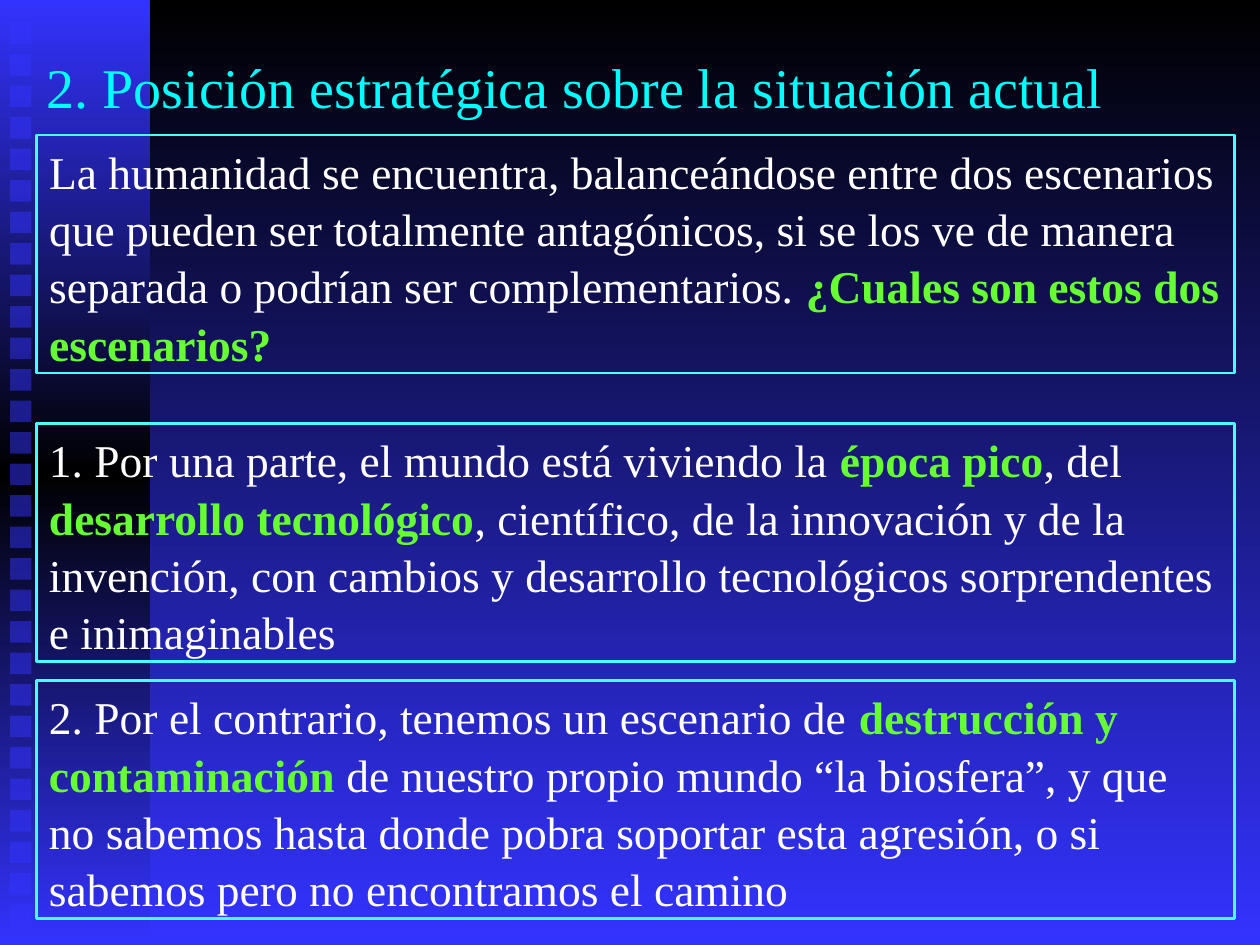
from lxml import etree
from pptx import Presentation, util as u
from pptx.dml.color import RGBColor
from pptx.enum import shapes, text
from pptx.oxml.ns import qn

HUES = {"blue": "3333FF", "black": "000000", "cyan": "00FFFF",
        "edge": "47FFFF", "white": "FFFFFF", "green": "66FF33"}
FONT = "Times New Roman"
LEFT, WIDE, HIGH = 0.29, 9.51, 1.89


class Deck:
    """Holds the style and the current slide."""

    def __init__(self):
        self.prs = Presentation()
        self.prs.slide_width, self.prs.slide_height = u.Inches(10), u.Inches(7.5)
        self.slide = self.prs.slides.add_slide(self.prs.slide_layouts[1])

    def hue(self, name):
        return RGBColor.from_string(HUES[name])

    def blend(self, fill, root, names):
        fill.gradient()
        fill.gradient_angle = 270
        stops = next(root.iter(qn("a:gsLst")))
        for old in list(stops):
            stops.remove(old)
        for i, name in enumerate(names):
            pos = str(100000 * i // (len(names) - 1))
            stop = etree.SubElement(stops, qn("a:gs"), pos=pos)
            etree.SubElement(stop, qn("a:srgbClr"), val=HUES[name])

    def back(self, names):
        self.blend(self.slide.background.fill, self.slide.element, names)

    def rect(self, *box):
        item = self.slide.shapes.add_shape(
            shapes.MSO_SHAPE.RECTANGLE, *map(u.Inches, box))
        item.shadow.inherit = False
        item.line.fill.background()
        return item

    def band(self, box, names):
        item = self.rect(*box)
        self.blend(item.fill, item.element, names)

    def tile(self, box, name):
        item = self.rect(*box)
        item.fill.solid()
        item.fill.fore_color.rgb = self.hue(name)
        tint = next(item.element.iter(qn("a:srgbClr")))
        etree.SubElement(tint, qn("a:alpha"), val="50000")

    def place(self, item, box):
        item.left, item.top, item.width, item.height = map(u.Inches, box)
        self.slide.shapes.element.append(item.element)

    def label(self, item, runs, size, anchor):
        frame = item.text_frame
        frame.word_wrap = True
        frame.auto_size = text.MSO_AUTO_SIZE.NONE
        frame.vertical_anchor = anchor
        para = frame.paragraphs[0]
        para.alignment = text.PP_ALIGN.LEFT
        for words, name, bold in runs:
            run = para.add_run()
            run.text = words
            font = run.font
            font.name, font.size, font.bold = FONT, u.Pt(size), bold
            font.color.rgb = self.hue(name)
        return para

    def title(self, words, box):
        item = self.slide.shapes.title
        self.place(item, box)
        self.label(item, [(words, "cyan", False)], 32, text.MSO_ANCHOR.MIDDLE)

    def panel(self, top, parts, body=False):
        box = LEFT, top, WIDE, HIGH
        if body:
            item = self.slide.placeholders[1]
            self.place(item, box)
        else:
            item = self.rect(*box)
        item.fill.background()
        item.line.color.rgb = self.hue("edge")
        item.line.width = u.Pt(1.5)
        runs = [(words, "green" if i % 2 else "white", bool(i % 2))
                for i, words in enumerate(parts)]
        para = self.label(item, runs, 26, text.MSO_ANCHOR.TOP)
        para.space_before = u.Pt(5.2)
        para.line_spacing = 1.05
        props = para._p.get_or_add_pPr()
        props.set("marL", "0")
        props.set("indent", "0")
        etree.SubElement(props, qn("a:buNone"))


def main():
    deck = Deck()
    deck.back(["black", "blue"])
    deck.band((0, 0, 1.19, 7.5), ["blue", "black", "blue"])
    for i in range(29):
        deck.tile((0.08, 0.18 + 0.25 * i, 0.17, 0.17), "blue")
    deck.title("2. Posición estratégica sobre la situación actual",
               (0.27, 0.13, 9.21, 1.1))
    deck.panel(1.07, [
        "La humanidad se encuentra, balanceándose entre dos escenarios que "
        "pueden ser totalmente antagónicos, si se los ve de manera separada "
        "o podrían ser complementarios. ",
        "¿Cuales son estos dos escenarios?"], body=True)
    deck.panel(5.4, [
        "2. Por el contrario, tenemos un escenario de ",
        "destrucción y contaminación ",
        "de nuestro propio mundo “la biosfera”, y que no sabemos hasta donde "
        "pobra soportar esta agresión, o si sabemos pero no encontramos el "
        "camino"])
    deck.panel(3.36, [
        "1. Por una parte, el mundo está viviendo la ", "época pico", ", del ",
        "desarrollo tecnológico",
        ", científico, de la innovación y de la invención, con cambios y "
        "desarrollo tecnológicos sorprendentes e inimaginables"])
    deck.prs.save("out.pptx")


if __name__ == "__main__":
    main()
